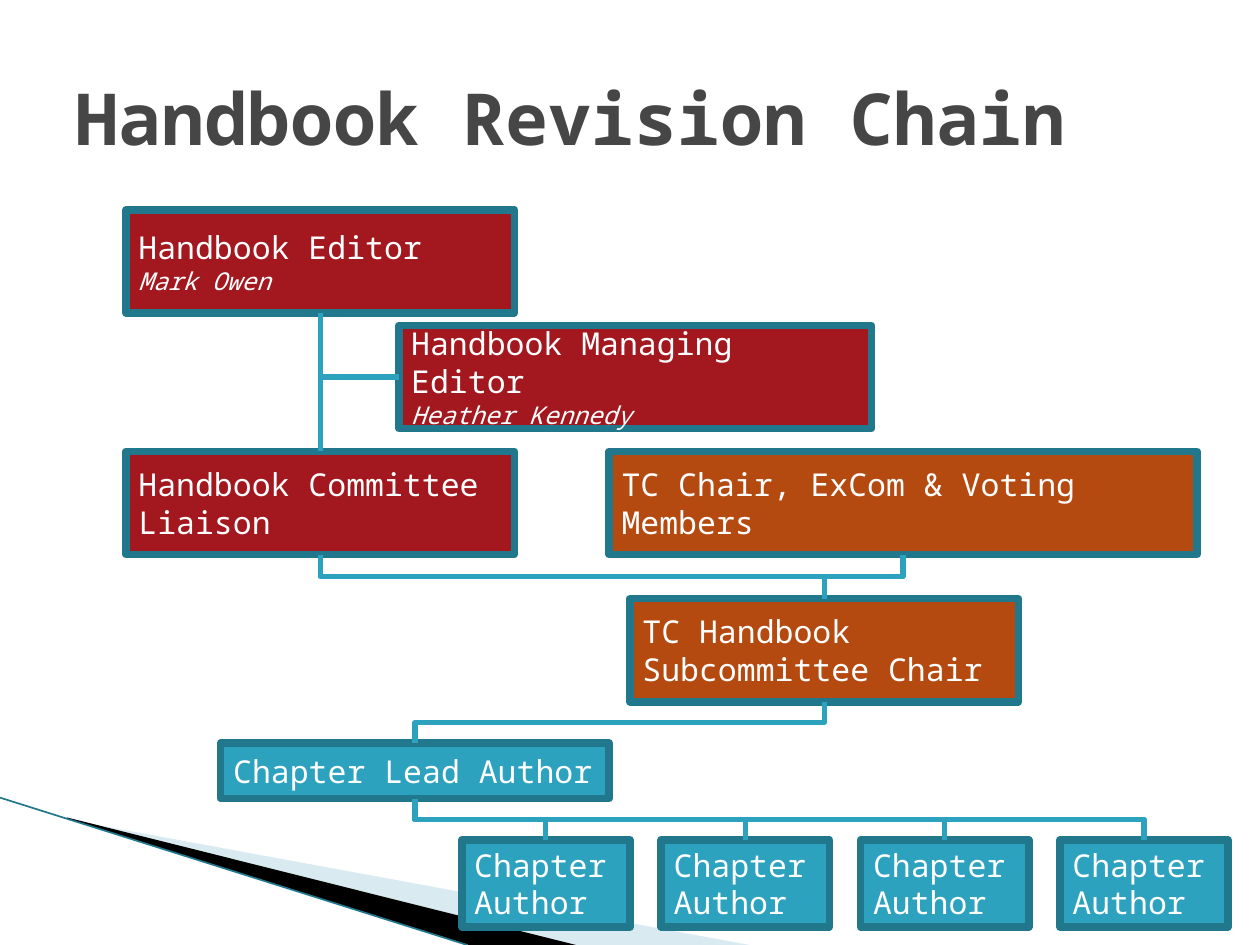
from dataclasses import dataclass

from lxml import etree
from pptx import Presentation
from pptx import util as u
from pptx.dml.color import RGBColor
from pptx.enum import shapes, text
from pptx.oxml.ns import qn


@dataclass(frozen=True)
class Theme:
    font: str = "Noto Sans Mono"
    title_size: float = 41
    role_size: float = 18
    person_size: float = 14
    border_width: float = 4.33
    link_width: float = 3
    title: str = "464646"
    light: str = "FFFFFF"
    dark: str = "000000"
    handbook: str = "A3171E"
    committee: str = "B54A10"
    author: str = "2DA2BF"
    border: str = "21788D"
    wedge: str = "A0CBDC"


def write(paragraph, words, *, font, size, color, bold=False, italic=False):
    run = paragraph.add_run()
    run.text = words
    run.font.name = font
    run.font.size = u.Pt(size)
    run.font.color.rgb = RGBColor.from_string(color)
    run.font.bold = bold
    run.font.italic = italic


class ChartSlide:
    def __init__(self, slide, theme):
        self.slide = slide
        self.theme = theme

    def title(self, words, left, top, width, height):
        heading = self.slide.shapes.add_textbox(*map(u.Cm, (left, top, width, height)))
        frame = heading.text_frame
        frame.word_wrap = True
        frame.vertical_anchor = text.MSO_ANCHOR.MIDDLE
        write(frame.paragraphs[0], words, font=self.theme.font,
              size=self.theme.title_size, color=self.theme.title, bold=True)

    def wedge(self, corners, color, opacity=100):
        points = [(u.Cm(x), u.Cm(y)) for x, y in corners]
        builder = self.slide.shapes.build_freeform(*points[0])
        builder.add_line_segments(points[1:], close=True)
        wedge = builder.convert_to_shape()
        wedge.shadow.inherit = False
        wedge.fill.solid()
        wedge.fill.fore_color.rgb = RGBColor.from_string(color)
        wedge.line.fill.background()
        if opacity < 100:
            tint = wedge._element.spPr.find(".//" + qn("a:srgbClr"))
            etree.SubElement(tint, qn("a:alpha")).set("val", str(opacity * 1000))

    def box(self, role, color, left, top, width, height, person=None):
        box = self.slide.shapes.add_shape(
            shapes.MSO_SHAPE.RECTANGLE, *map(u.Cm, (left, top, width, height)))
        box.shadow.inherit = False
        box.fill.solid()
        box.fill.fore_color.rgb = RGBColor.from_string(color)
        box.line.color.rgb = RGBColor.from_string(self.theme.border)
        box.line.width = u.Pt(self.theme.border_width)
        frame = box.text_frame
        frame.word_wrap = True
        frame.vertical_anchor = text.MSO_ANCHOR.MIDDLE
        style = dict(font=self.theme.font, color=self.theme.light)
        write(frame.paragraphs[0], role, size=self.theme.role_size, **style)
        if person:
            write(frame.add_paragraph(), person, size=self.theme.person_size,
                  italic=True, **style)
        for paragraph in frame.paragraphs:
            paragraph.alignment = text.PP_ALIGN.LEFT
        return box

    def line(self, kind, start, end, color, width):
        line = self.slide.shapes.add_connector(kind, *start, *end)
        line.line.color.rgb = RGBColor.from_string(color)
        line.line.width = u.Pt(width)
        etree.SubElement(line._element.spPr, qn("a:effectLst"))
        return line

    def drop(self, upper, lower):
        x1, y1 = upper.left + upper.width // 2, upper.top + upper.height
        x2, y2 = lower.left + lower.width // 2, lower.top
        run, fall = abs(x2 - x1), y2 - y1
        left = (x1 + x2 - fall) // 2
        top = (y1 + y2 - run) // 2
        rightward = x2 > x1
        ends = (left + fall, left) if rightward else (left, left + fall)
        link = self.line(shapes.MSO_CONNECTOR.ELBOW, (ends[0], top),
                         (ends[1], top + run), self.theme.author, self.theme.link_width)
        link._element.spPr.xfrm.set("rot", str((270 if rightward else 90) * 60000))

    def side_drop(self, side, lower):
        link = self.line(shapes.MSO_CONNECTOR.ELBOW,
                         (side.left, side.top + side.height // 2),
                         (lower.left + lower.width // 2, lower.top),
                         self.theme.author, self.theme.link_width)
        link._element.spPr.find(qn("a:prstGeom")).set("prst", "bentConnector2")


def main():
    deck = Presentation()
    deck.slide_width, deck.slide_height = u.Cm(25.4), u.Cm(19.05)
    theme = Theme()
    chart = ChartSlide(deck.slides.add_slide(deck.slide_layouts[6]), theme)

    chart.wedge([(1.4, 16.53), (15.11, 19.05), (11.58, 19.05), (1.4, 16.51)],
                theme.wedge, opacity=40)
    chart.wedge([(1.35, 16.48), (11.61, 19.05), (9.45, 19.05), (1.37, 16.51)], theme.dark)
    chart.line(shapes.MSO_CONNECTOR.STRAIGHT, (0, u.Cm(16.08)),
               (u.Cm(9.42), u.Cm(19.05)), theme.border, 0.95)
    chart.title("Handbook Revision Chain", 1.27, 0.76, 22.86, 3.18)

    width, height = 7.83, 2.08
    editor = chart.box("Handbook Editor", theme.handbook,
                       2.54, 4.23, width, height, person="Mark Owen")
    managing_editor = chart.box("Handbook Managing Editor", theme.handbook,
                                8.04, 6.56, 9.53, height, person="Heather Kennedy")
    liaison = chart.box("Handbook Committee Liaison", theme.handbook,
                        2.54, 9.1, width, height)
    voters = chart.box("TC Chair, ExCom & Voting Members", theme.committee,
                       12.28, 9.1, 11.85, height)
    subcommittee = chart.box("TC Handbook Subcommittee Chair", theme.committee,
                             12.7, 12.07, width, height)
    lead_author = chart.box("Chapter Lead Author", theme.author, 4.45, 14.98, width, 1.12)
    authors = [chart.box("Chapter Author", theme.author, 9.31 + 4.02 * i, 16.93, 3.39, 1.76)
               for i in range(4)]

    chain = [(editor, liaison), (liaison, subcommittee), (voters, subcommittee),
             (subcommittee, lead_author)]
    for upper, lower in chain + [(lead_author, author) for author in authors]:
        chart.drop(upper, lower)
    chart.side_drop(managing_editor, liaison)

    deck.save("out.pptx")


if __name__ == "__main__":
    main()
